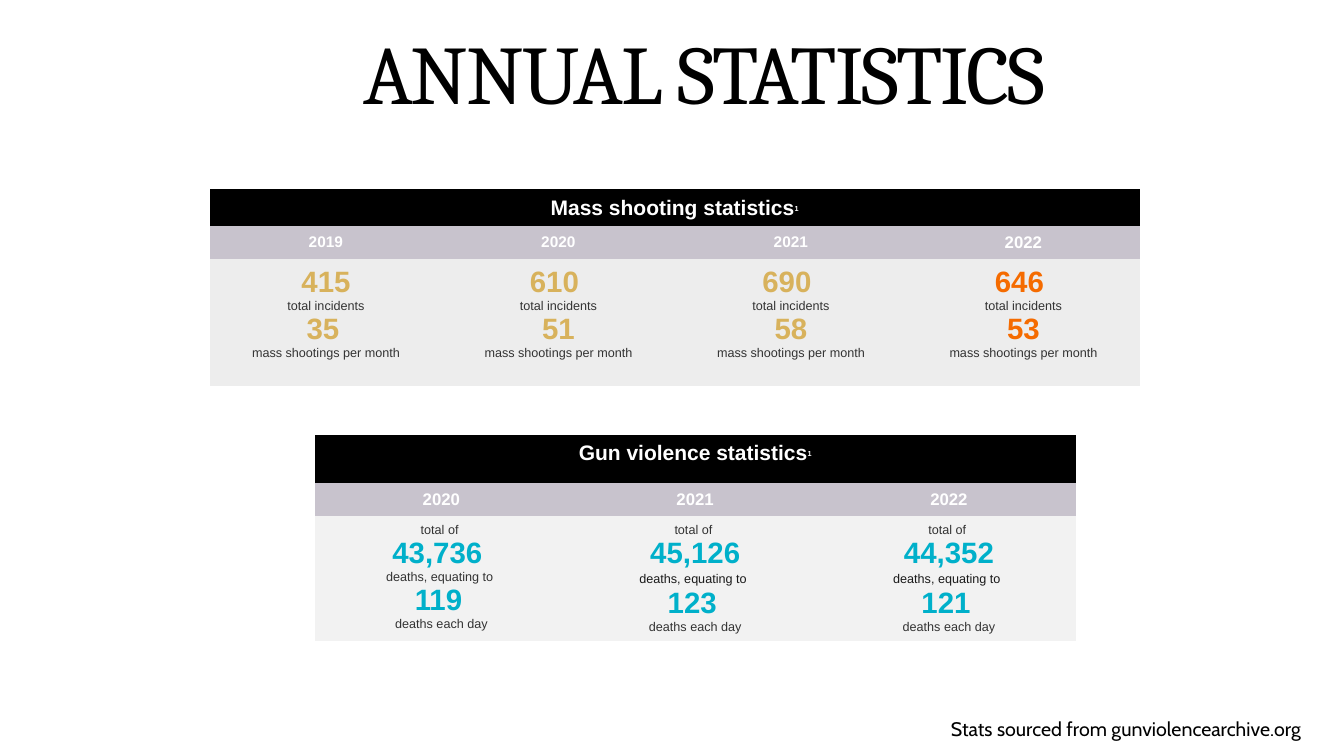
from dataclasses import dataclass

from pptx import Presentation
from pptx.dml.color import RGBColor
from pptx.enum.text import MSO_ANCHOR, PP_ALIGN
from pptx.util import Inches, Pt

MID = PP_ALIGN.CENTER
CENTER = MSO_ANCHOR.MIDDLE
WIDE, HIGH = Inches(13.33), Inches(7.5)
PLAIN = "{2D5ABB26-0587-4C30-8999-92F81FD0307C}"


@dataclass(frozen=True)
class Theme:
    black: str = "000000"
    white: str = "FFFFFF"
    mauve: str = "C8C3CD"
    pale: str = "EDEDED"
    light: str = "F2F2F2"
    gray: str = "333333"
    ink: str = "1A1A1A"
    gold: str = "D8B25C"
    orange: str = "F56B00"
    teal: str = "00B0CA"
    head: str = "Cambria"
    body: str = "Arial"
    foot: str = "Cabin"
    title: float = 59.4
    big: int = 21
    band: int = 15
    note: int = 14
    year: int = 12
    slim: int = 11
    small: int = 9


T = Theme()


def across(share):
    return round(WIDE * share / 100)


def down(share):
    return round(HIGH * share / 100)


def style(run, size, color, face=T.body, bold=False):
    run.font.size = Pt(size)
    run.font.name = face
    run.font.bold = bold
    run.font.color.rgb = RGBColor.from_string(color)


def add_title(slide, text):
    title = slide.shapes.title
    title.left, title.top = across(25), down(3.7)
    title.width, title.height = across(54.75), down(13.9)
    frame = title.text_frame
    frame.text = text
    frame.vertical_anchor = CENTER
    para = frame.paragraphs[0]
    para.alignment = MID
    para.line_spacing = 0.8
    run = para.runs[0]
    style(run, T.title, T.black, T.head)
    run.font._element.set("spc", "-150")


def add_note(slide, text):
    box = slide.shapes.add_textbox(across(70.75), down(94.8), across(28.5), down(4.5))
    frame = box.text_frame
    frame.word_wrap = True
    frame.margin_left = frame.margin_top = 0
    frame.margin_right = frame.margin_bottom = 0
    frame.text = text
    style(frame.paragraphs[0].runs[0], T.note, T.black, T.foot)


def fill_cell(cell, color, lines):
    cell.margin_left = cell.margin_right = Inches(0.13)
    cell.margin_top = cell.margin_bottom = Inches(0.07)
    cell.fill.solid()
    cell.fill.fore_color.rgb = RGBColor.from_string(color)
    cell.text_frame.text = "\n".join(line[0] for line in lines)
    for para, (_, size, ink, bold, tail) in zip(cell.text_frame.paragraphs, lines):
        para.alignment = MID
        style(para.runs[0], size, ink, bold=bold)
        if tail:
            run = para.add_run()
            run.text = " "
            style(run, tail, ink)


def big(text, color, tail=None):
    return text, T.big, color, True, tail


def small(text, color=T.gray, tail=None):
    return text, T.small, color, False, tail


def add_stats(slide, place, rows, name, fill, data):
    left, top, width = place
    table = slide.shapes.add_table(
        3, len(data), across(left), down(top), across(width), down(sum(rows))
    ).table
    table._tbl.tblPr[0].text = PLAIN
    table.first_row = table.horz_banding = False
    for row, high in zip(table.rows, rows):
        row.height = down(high)
    for col in table.columns:
        col.width = across(width / len(data))
    band = table.cell(0, 0)
    band.merge(table.cell(0, len(data) - 1))
    fill_cell(band, T.black, [(name, T.band, T.white, True, None)])
    mark = band.text_frame.paragraphs[0].add_run()
    mark.text = "1"
    style(mark, T.small, T.white, bold=True)
    mark.font._element.set("baseline", "30000")
    for col, (year, size, lines) in enumerate(data):
        fill_cell(table.cell(1, col), T.mauve, [(year, size, T.white, True, None)])
        fill_cell(table.cell(2, col), fill, lines)


def mass(year, total, month, color=T.gold, size=T.slim, tail=None):
    lines = [
        big(total, color),
        small("total incidents"),
        big(month, color, tail),
        small("mass shootings per month"),
    ]
    return year, size, lines


def deaths(year, total, daily, color=T.ink, tail=T.slim):
    lines = [
        small("total of "),
        big(total, T.teal),
        small("deaths, equating to", color, tail),
        big(daily, T.teal, T.band),
        small("deaths each day"),
    ]
    return year, T.year, lines


def main():
    deck = Presentation()
    deck.slide_width, deck.slide_height = WIDE, HIGH
    slide = deck.slides.add_slide(deck.slide_layouts[5])
    add_title(slide, "ANNUAL STATISTICS")
    add_stats(
        slide, (15.6, 25, 69.2), (4.9, 4.25, 16.8),
        "Mass shooting statistics", T.pale,
        [
            mass("2019", "415", "35", tail=T.band),
            mass("2020", "610 ", "51"),
            mass("2021", "690 ", "58"),
            mass("2022", "646 ", "53", T.orange, T.year),
        ],
    )
    add_stats(
        slide, (23.4, 57.5, 56.65), (6.4, 4.25, 16.5),
        "Gun violence statistics", T.light,
        [
            deaths("2020", "43,736 ", "119", T.gray, T.small),
            deaths("2021", "45,126", "123"),
            deaths("2022", "44,352", "121"),
        ],
    )
    add_note(slide, "Stats sourced from gunviolencearchive.org")
    deck.save("out.pptx")


if __name__ == "__main__":
    main()
